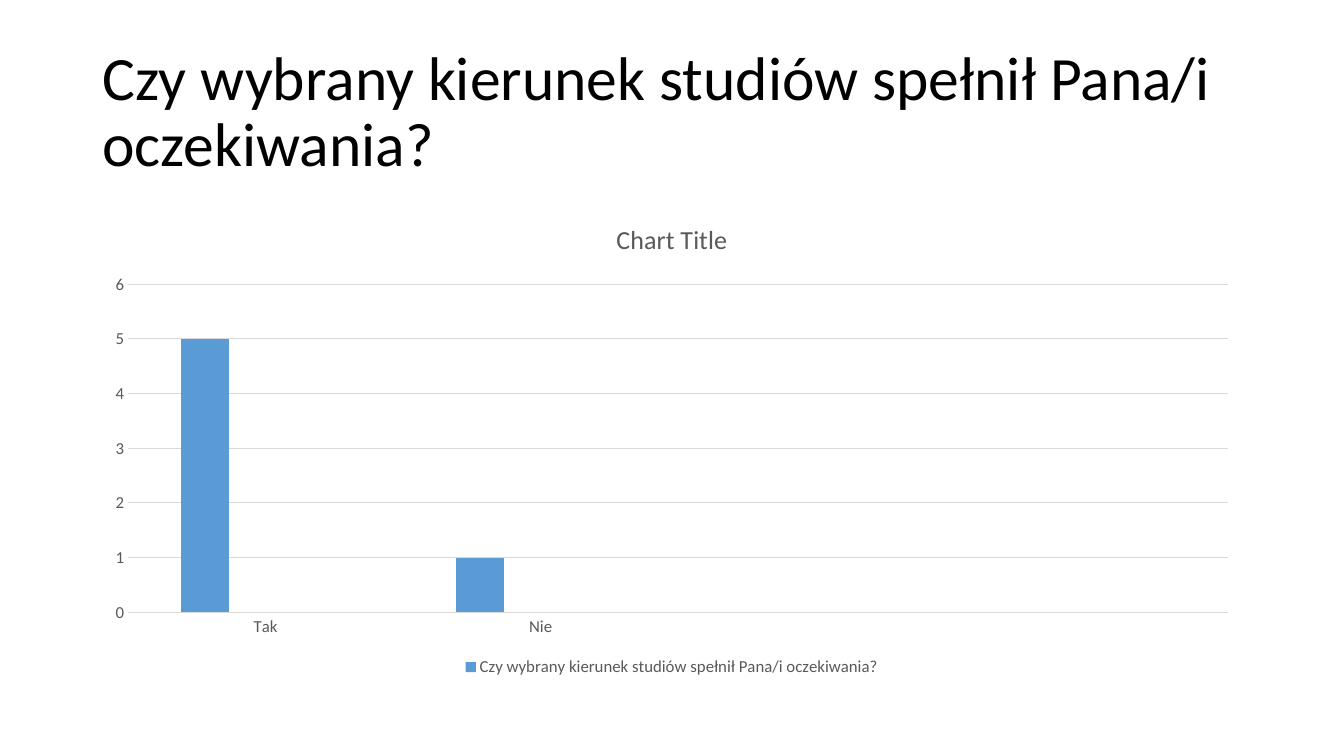
from lxml.etree import SubElement
from pptx import Presentation
from pptx.chart.data import CategoryChartData
from pptx.dml.color import RGBColor
from pptx.enum.chart import XL_CHART_TYPE, XL_LEGEND_POSITION, XL_TICK_MARK
from pptx.enum.text import MSO_ANCHOR
from pptx.oxml.ns import qn
from pptx.util import Inches, Pt

WIDTH, HEIGHT = Inches(13.333), Inches(7.5)
COLUMNS, ROWS = 160, 90
FONT, INK, MUTED, RULE = "Calibri", "000000", "595959", "D9D9D9"
QUESTION = "Czy wybrany kierunek studiów spełnił Pana/i oczekiwania?"
ANSWERS = ["Tak", "Nie", "", ""]
SERIES = [
    (QUESTION, [5, 1, None, None], "5B9BD5"),
    ("Series 2", [None] * 4, "ED7D31"),
    ("Series 3", [None] * 4, "A5A5A5"),
]


def color(value):
    """Turn a hex string into a colour."""
    return RGBColor.from_string(value)


def grid(column, row, columns, rows):
    """Turn grid cells into left, top, width and height."""
    return (int(WIDTH * column / COLUMNS), int(HEIGHT * row / ROWS),
            int(WIDTH * columns / COLUMNS), int(HEIGHT * rows / ROWS))


def style_font(font, size, ink):
    """Set typeface, size and colour."""
    font.name, font.size, font.bold = FONT, Pt(size), False
    font.color.rgb = color(ink)


def style_rule(line):
    """Draw a thin grey line."""
    line.color.rgb = color(RULE)
    line.width = Pt(0.75)


def add_heading(slide, wording, area):
    """Add the slide heading."""
    frame = slide.shapes.add_textbox(*area).text_frame
    frame.word_wrap = True
    frame.vertical_anchor = MSO_ANCHOR.MIDDLE
    paragraph = frame.paragraphs[0]
    paragraph.line_spacing = 0.9
    run = paragraph.add_run()
    run.text = wording
    style_font(run.font, 44, INK)


def style_axes(chart):
    """Style the answer axis and the count axis."""
    answers, counts = chart.category_axis, chart.value_axis
    for axis in (answers, counts):
        axis.major_tick_mark = axis.minor_tick_mark = XL_TICK_MARK.NONE
        style_font(axis.tick_labels.font, 12, MUTED)
    style_rule(answers.format.line)
    counts.format.line.fill.background()
    counts.minimum_scale, counts.maximum_scale, counts.major_unit = 0, 6, 1
    counts.has_major_gridlines = True
    style_rule(counts.major_gridlines.format.line)


def add_legend(chart, hidden):
    """Put the legend below the plot without the hidden entries."""
    chart.has_legend = True
    legend = chart.legend
    legend.position = XL_LEGEND_POSITION.BOTTOM
    legend.include_in_layout = False
    style_font(legend.font, 12, MUTED)
    position = legend._element.find(qn("c:legendPos"))
    for index in reversed(hidden):
        entry = SubElement(legend._element, qn("c:legendEntry"))
        SubElement(entry, qn("c:idx")).set("val", str(index))
        SubElement(entry, qn("c:delete")).set("val", "1")
        position.addnext(entry)


def add_answer_chart(slide, area):
    """Add the column chart of answers."""
    answers = CategoryChartData()
    answers.categories = ANSWERS
    for name, values, _ in SERIES:
        answers.add_series(name, values)
    chart = slide.shapes.add_chart(
        XL_CHART_TYPE.COLUMN_CLUSTERED, *area, answers).chart
    style_font(chart.font, 10, INK)
    chart.has_title = True
    caption = chart.chart_title.text_frame.paragraphs[0].add_run()
    caption.text = "Chart Title"
    style_font(caption.font, 18.6, MUTED)
    plot = chart.plots[0]
    plot.gap_width, plot.overlap, plot.vary_by_categories = 219, -27, False
    for series, (_, _, fill) in zip(plot.series, SERIES):
        series.format.fill.solid()
        series.format.fill.fore_color.rgb = color(fill)
    style_axes(chart)
    add_legend(chart, [1, 2])


def main():
    """Build the slide and save it."""
    deck = Presentation()
    deck.slide_width, deck.slide_height = WIDTH, HEIGHT
    slide = deck.slides.add_slide(deck.slide_layouts[6])
    add_heading(slide, QUESTION, grid(11, 4.8, 138, 17.4))
    add_answer_chart(slide, grid(11, 24, 138, 57.1))
    deck.save("out.pptx")


if __name__ == "__main__":
    main()
